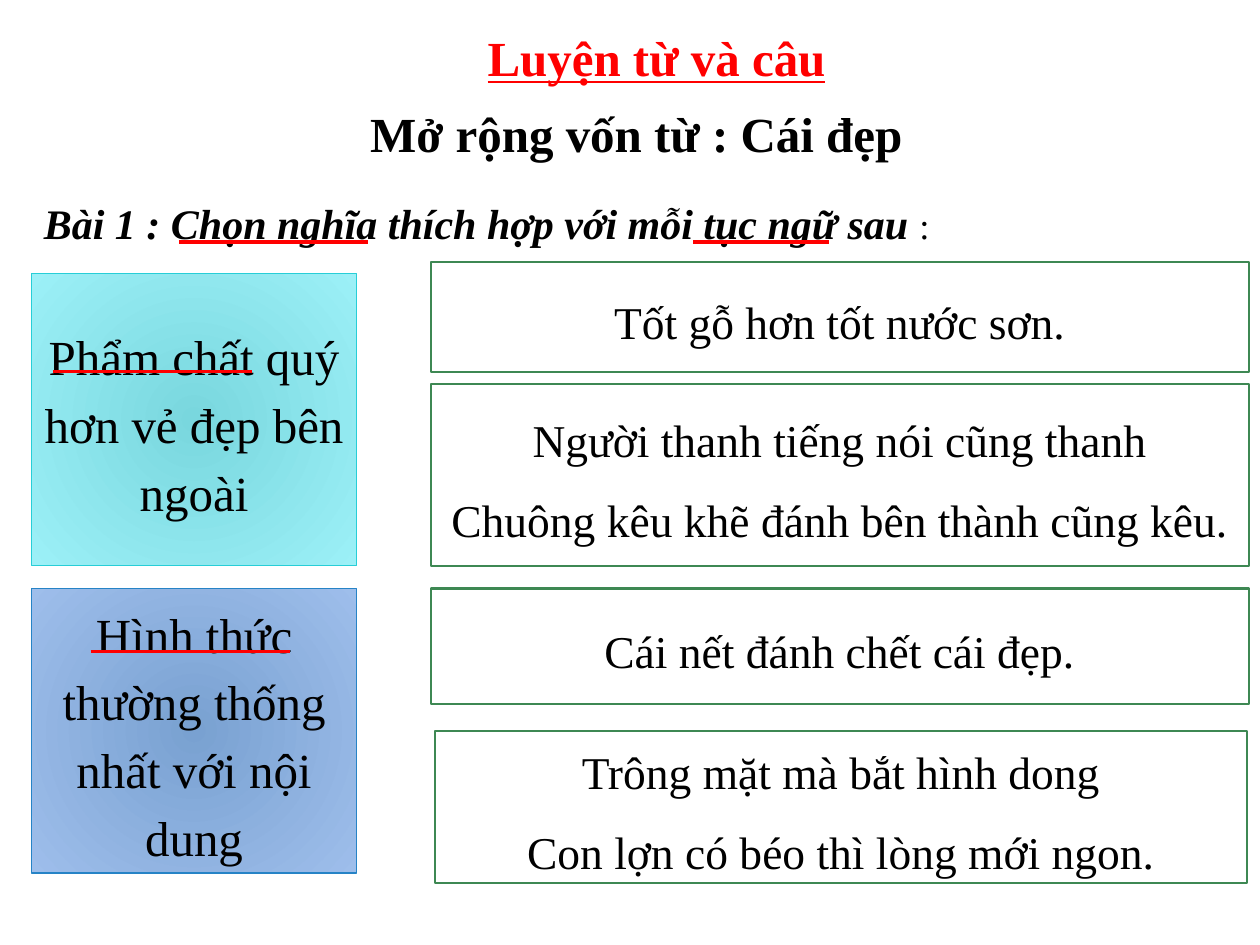
"""Build a Vietnamese vocabulary slide that sets meanings beside proverbs."""
from lxml.etree import SubElement
from pptx import Presentation
from pptx.dml.color import RGBColor
from pptx.enum.shapes import MSO_CONNECTOR, MSO_SHAPE
from pptx.enum.text import MSO_ANCHOR, PP_ALIGN
from pptx.oxml.ns import qn
from pptx.util import Inches, Pt

FONT = "Times New Roman"
BLACK, WHITE, RED, GREEN = "000000", "FFFFFF", "FF0000", "3E8853"
MEANING_COLUMN = (0.25, 2.58)
PROVERB_COLUMN = (3.42, 6.49)
LAST_PROVERB_COLUMN = (3.45, 6.45)
UPPER_ROW, LOWER_ROW = 2.17, 4.67

HEADINGS = [
    ((2.67, 0.17, 5.08, 0.57), PP_ALIGN.CENTER,
     [("Luyện từ và câu", 28, RED, {"bold": True, "underline": True})]),
    ((2.3, 0.77, 5.5, 0.57), PP_ALIGN.CENTER,
     [("Mở rộng vốn từ : Cái đẹp", 28, BLACK, {"bold": True})]),
    ((0.25, 1.52, 9.5, 0.5), PP_ALIGN.LEFT,
     [("Bài 1 : Chọn nghĩa thích hợp với mỗi tục ngữ sau ", 24, BLACK,
       {"bold": True, "italic": True}),
      (":", 21, BLACK, {})]),
]
MEANINGS = [
    (UPPER_ROW, 2.32, "Phẩm chất quý hơn vẻ đẹp bên ngoài", ("79D7DE", "9CF0F7"), "27CED7"),
    (LOWER_ROW, 2.26, "Hình thức thường thống nhất với nội dung", ("79A1D1", "9EBEEB"), "2683C6"),
]
PROVERBS = [
    (PROVERB_COLUMN, 2.08, 0.87, ["Tốt gỗ hơn tốt nước sơn."]),
    (PROVERB_COLUMN, 3.05, 1.44,
     ["Người thanh tiếng nói cũng thanh", "Chuông kêu khẽ đánh bên thành cũng kêu."]),
    (PROVERB_COLUMN, LOWER_ROW, 0.92, ["Cái nết đánh chết cái đẹp."]),
    (LAST_PROVERB_COLUMN, 5.8, 1.21,
     ["Trông mặt mà bắt hình dong", "Con lợn có béo thì lòng mới ngon."]),
]
UNDERLINES = [
    (1.42, 1.92, 1.5, 2.25),
    (5.5, 1.92, 1.08, 2.25),
    (0.42, 2.95, 1.58, 1.75),
    (0.72, 5.17, 1.58, 1.75),
]


def color(value):
    return RGBColor.from_string(value)


def add_run(paragraph, text, size, ink=BLACK, style=None):
    run = paragraph.add_run()
    run.text = text
    run.font.name, run.font.size = FONT, Pt(size)
    run.font.color.rgb = color(ink)
    for name, value in (style or {}).items():
        setattr(run.font, name, value)


def add_heading(slide, box, alignment, runs):
    frame = slide.shapes.add_textbox(*map(Inches, box)).text_frame
    frame.word_wrap = True
    paragraph = frame.paragraphs[0]
    paragraph.alignment = alignment
    for run in runs:
        add_run(paragraph, *run)


def add_card(slide, column, top, height, lines, size, border, border_width):
    left, width = column
    shape = slide.shapes.add_shape(MSO_SHAPE.RECTANGLE, *map(Inches, (left, top, width, height)))
    shape.shadow.inherit = False
    shape.line.color.rgb = color(border)
    shape.line.width = Pt(border_width)
    frame = shape.text_frame
    frame.word_wrap = True
    frame.vertical_anchor = MSO_ANCHOR.MIDDLE
    for index, line in enumerate(lines):
        paragraph = frame.add_paragraph() if index else frame.paragraphs[0]
        paragraph.alignment = PP_ALIGN.CENTER
        paragraph.line_spacing = 1.15
        paragraph.space_after = Pt(10.1)
        add_run(paragraph, line, size)
    return shape


def fill_radial(shape, colors):
    shape.fill.gradient()
    for stop, value in zip(shape.fill.gradient_stops, colors):
        stop.color.rgb = color(value)
    gradient = shape._element.spPr.find(qn("a:gradFill"))
    gradient.remove(gradient.find(qn("a:lin")))
    circle = SubElement(gradient, qn("a:path"), path="circle")
    SubElement(circle, qn("a:fillToRect"), dict.fromkeys("ltrb", "100000"))


def add_underline(slide, left, top, length, width):
    line = slide.shapes.add_connector(
        MSO_CONNECTOR.STRAIGHT, *map(Inches, (left, top, left + length, top)))
    line.line.color.rgb = color(RED)
    line.line.width = Pt(width)
    SubElement(line._element.spPr, qn("a:effectLst"))


def main():
    presentation = Presentation()
    presentation.slide_width, presentation.slide_height = Inches(10), Inches(7.5)
    slide = presentation.slides.add_slide(presentation.slide_layouts[6])
    for heading in HEADINGS:
        add_heading(slide, *heading)
    for top, height, text, colors, border in MEANINGS:
        card = add_card(slide, MEANING_COLUMN, top, height, [text], 28, border, 0.75)
        fill_radial(card, colors)
    for column, top, height, lines in PROVERBS:
        card = add_card(slide, column, top, height, lines, 26, GREEN, 1.25)
        card.fill.solid()
        card.fill.fore_color.rgb = color(WHITE)
    for underline in UNDERLINES:
        add_underline(slide, *underline)
    presentation.save("out.pptx")


if __name__ == "__main__":
    main()
